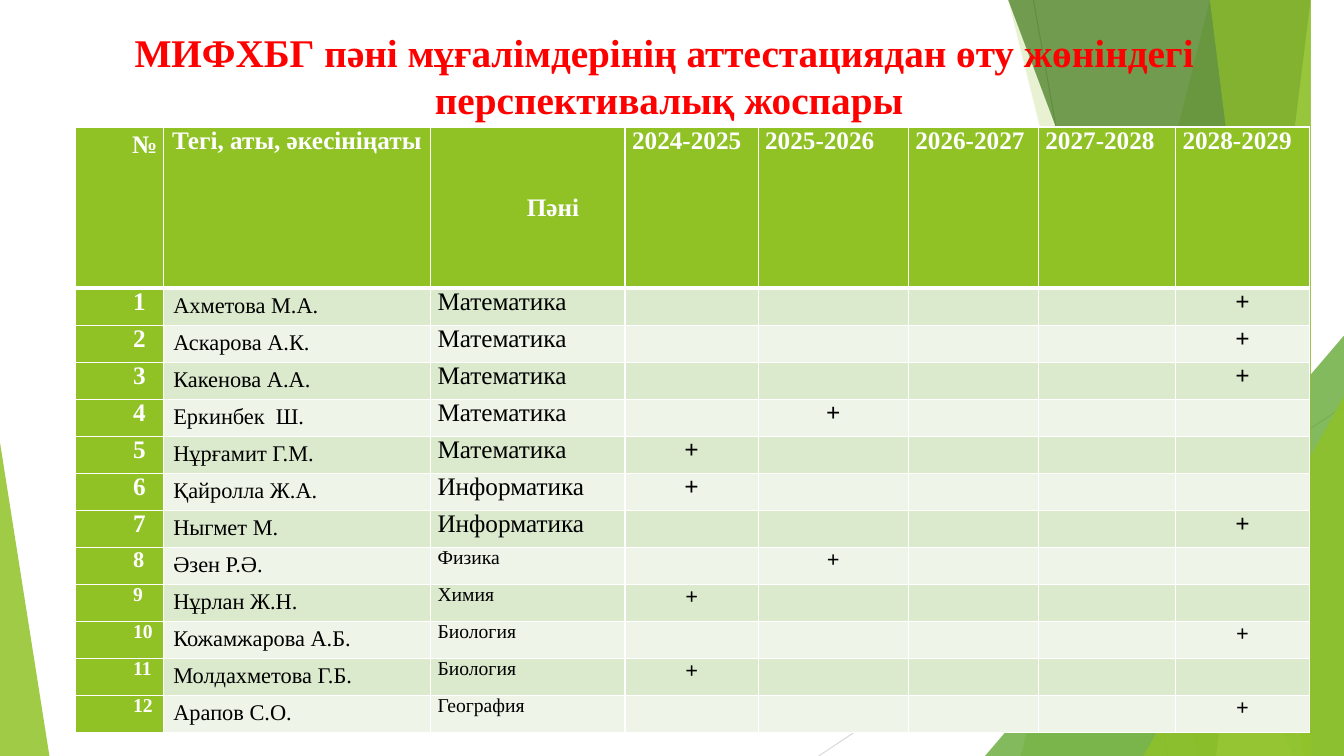
"""Build the slide with the teachers' attestation plan."""
from pptx import Presentation
from pptx.dml.color import RGBColor
from pptx.enum import shapes, text
from pptx.oxml import parse_xml
from pptx.oxml.ns import nsdecls, qn
from pptx.util import Inches, Pt


def tint(color, code):
    color.rgb = RGBColor.from_string(code)


def write(frame, words, size=18, color="000000", bold=False, align="LEFT", indent=0):
    par = frame.paragraphs[0]
    par.alignment = getattr(text.PP_ALIGN, align)
    if indent:
        props = par._p.get_or_add_pPr()
        props.set("marL", str(Inches(indent)))
        props.set("indent", "0")
    run = par.add_run()
    run.text = words
    run.font.name = "Times New Roman"
    run.font.size = Pt(size)
    run.font.bold = bold
    tint(run.font.color, color)
    return par


deck = Presentation()
deck.slide_width, deck.slide_height = Inches(13.33), Inches(7.5)
slide = deck.slides.add_slide(deck.slide_layouts[6])
items = slide.shapes

for ends, code in [((10.25, 0, 11.58, 7.5), "BFBFBF"), ((13.33, 4.03, 8.12, 7.5), "D9D9D9")]:
    line = items.add_connector(shapes.MSO_CONNECTOR.STRAIGHT, *map(Inches, ends))
    line.line.width = Pt(0.75)
    tint(line.line.color, code)
    line._element.spPr.append(parse_xml(f"<a:effectLst {nsdecls('a')}/>"))

bands = [
    ("band", (12.28, 10.04), "90C226", 30),
    ("band", (10.5, 11.83), "90C226", 20),
    ("peak", (9.77, 3.33, 3.56, 4.17, 1), "54A021", 72),
    ("band", (10.21, 12.91), "3F7819", 70),
    ("band", (13.03, 11.92), "C0E474", 70),
    ("band", (11.96, 13.18), "90C226", 65),
    ("peak", (11.34, 3.93, 1.99, 3.57, 1), "90C226", 80),
    ("peak", (0, 4.39, 0.49, 3.11, 0), "90C226", 85),
]
for kind, place, code, alpha in bands:
    if kind == "band":
        top, foot = place
        path = items.build_freeform(top, 0, scale=Inches(1))
        path.add_line_segments([(13.33, 0), (13.33, 7.5), (foot, 7.5)], close=True)
        facet = path.convert_to_shape()
    else:
        *box, tip = place
        facet = items.add_shape(shapes.MSO_SHAPE.ISOSCELES_TRIANGLE, *map(Inches, box))
        facet.adjustments[0] = tip
    facet.shadow.inherit = False
    facet.line.fill.background()
    facet.fill.solid()
    tint(facet.fill.fore_color, code)
    shade = facet._element.spPr.find(qn("a:solidFill"))[0]
    shade.append(parse_xml(f'<a:alpha {nsdecls("a")} val="{alpha * 1000}"/>'))

title = items.add_textbox(Inches(0.14), Inches(0.23), Inches(12.99), Inches(1.04)).text_frame
title.word_wrap = True
title.vertical_anchor = text.MSO_ANCHOR.MIDDLE
write(title, "МИФХБГ пәні мұғалімдерінің аттестациядан өту жөніндегі  перспективалық жоспары",
      size=28, color="FF0000", bold=True, align="CENTER")

heads = ["№", "Тегі, аты, әкесініңаты", "Пәні"]
heads += [f"{year}-{year + 1}" for year in range(2024, 2029)]
staff = [
    ("Ахметова М.А.", "Математика", 2028),
    ("Аскарова А.К.", "Математика", 2028),
    ("Какенова А.А.", "Математика", 2028),
    ("Еркинбек  Ш.", "Математика", 2025),
    ("Нұрғамит Г.М.", "Математика", 2024),
    ("Қайролла Ж.А.", "Информатика", 2024),
    ("Ныгмет М.", "Информатика", 2028),
    ("Әзен Р.Ә.", "Физика", 2025),
    ("Нұрлан Ж.Н.", "Химия", 2024),
    ("Кожамжарова А.Б.", "Биология", 2028),
    ("Молдахметова Г.Б.", "Биология", 2024),
    ("Арапов С.О.", "География", 2028),
]
widths = [0.87, 2.65, 1.93, 1.32, 1.49, 1.29, 1.36, 1.33]
grid = items.add_table(len(staff) + 1, len(heads), Inches(0.75), Inches(1.26),
                       Inches(sum(widths)), Inches(6)).table
for col, width in zip(grid.columns, widths):
    col.width = Inches(width)
for num, row in enumerate(grid.rows):
    row.height = Inches(0.36 if num else 1.6)
    for pos, cell in enumerate(row.cells):
        props = cell._tc.get_or_add_tcPr()
        for side in "LRTB":
            thick = (num, side) in [(0, "B"), (1, "T")]
            props.append(parse_xml(
                f'<a:ln{side} {nsdecls("a")} w="{Pt(3 if thick else 1)}"><a:solidFill>'
                f'<a:srgbClr val="FFFFFF"/></a:solidFill></a:ln{side}>'))
        cell.fill.solid()
        green = num == 0 or pos == 0
        tint(cell.fill.fore_color, "90C226" if green else "DBE9CD" if num % 2 else "EEF4E8")
        if num == 0 or pos != 1:
            cell.margin_left = cell.margin_right = Inches(0.07)
            cell.margin_top = cell.margin_bottom = 0

for pos, head in enumerate(heads):
    cell = grid.cell(0, pos)
    par = write(cell.text_frame, head, color="FFFFFF", bold=True,
                align="CENTER" if pos < 3 else "LEFT", indent=0.5 if pos in (0, 2) else 0)
    if pos == 0:
        par.line_spacing = 1.15
        par.space_after = Pt(10)
    if pos == 2:
        cell.vertical_anchor = text.MSO_ANCHOR.MIDDLE

for num, (name, topic, year) in enumerate(staff, 1):
    early = num < 8
    frames = [cell.text_frame for cell in grid.rows[num].cells]
    write(frames[0], str(num), size=18 if early else 16 if num == 8 else 14,
          color="FFFFFF", bold=True, indent=0.5)
    write(frames[1], name, size=16)
    write(frames[2], topic, size=18 if early else 14)
    write(frames[year - 2021], "+", size=18 if early else 16, bold=True, align="CENTER")

deck.save("out.pptx")
